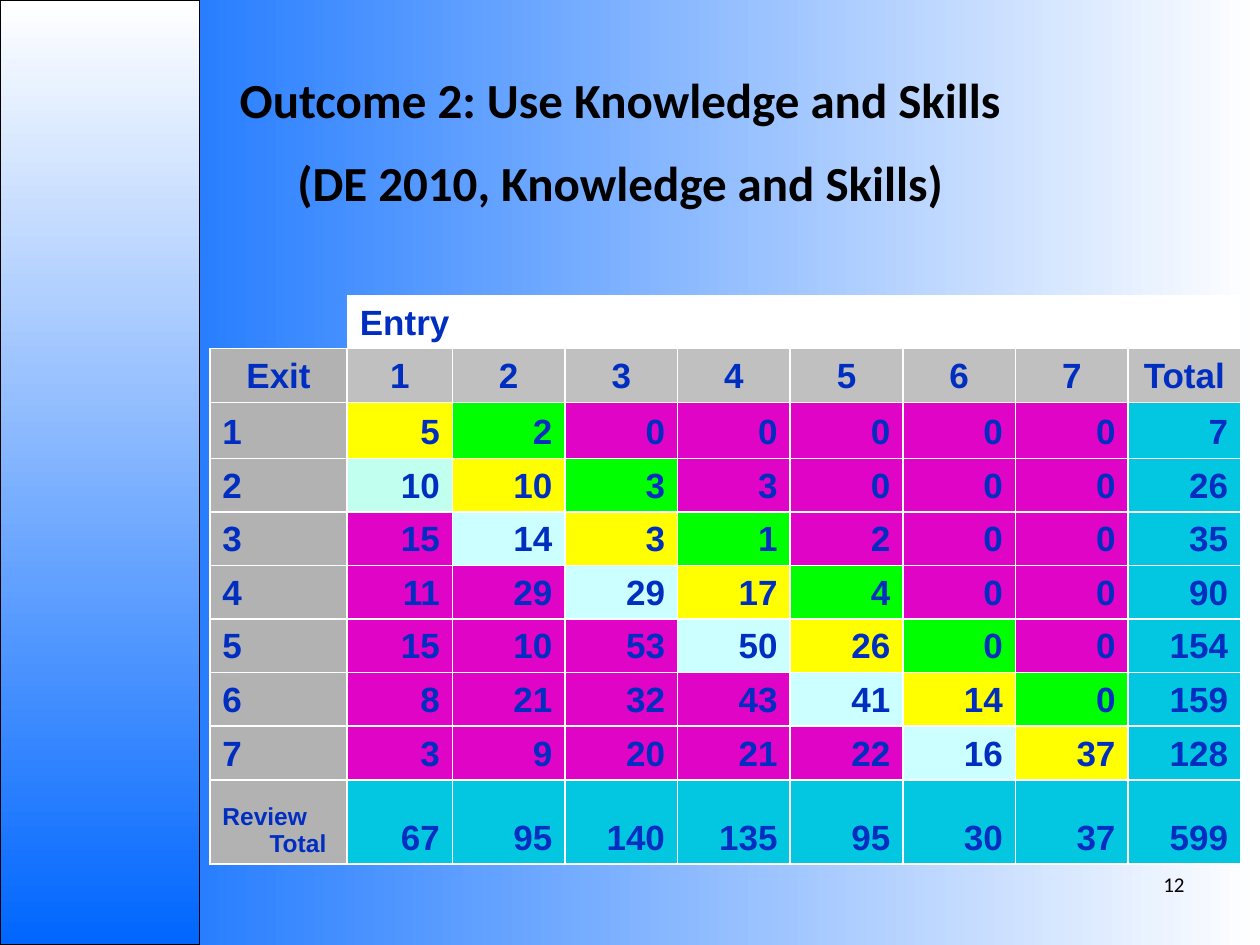
from lxml.etree import SubElement
from pptx import Presentation
from pptx.dml.color import RGBColor
from pptx.enum.shapes import MSO_SHAPE
from pptx.enum.text import MSO_ANCHOR, PP_ALIGN
from pptx.oxml.ns import qn
from pptx.util import Cm, Pt

TITLE = ["Outcome 2: Use Knowledge and Skills", "(DE 2010, Knowledge and Skills)"]
PAGE = "12"
ENTRY = "Entry"
HEAD = ["Exit", "1", "2", "3", "4", "5", "6", "7", "Total"]
BODY = [
    ["1", 5, 2, 0, 0, 0, 0, 0, 7],
    ["2", 10, 10, 3, 3, 0, 0, 0, 26],
    ["3", 15, 14, 3, 1, 2, 0, 0, 35],
    ["4", 11, 29, 29, 17, 4, 0, 0, 90],
    ["5", 15, 10, 53, 50, 26, 0, 0, 154],
    ["6", 8, 21, 32, 43, 41, 14, 0, 159],
    ["7", 3, 9, 20, 21, 22, 16, 37, 128],
]
FOOT = ["Review Total", 67, 95, 140, 135, 95, 30, 37, 599]

THEME = {
    "blue": "0066FF", "white": "FFFFFF", "black": "000000", "ink": "002EC0",
    "side": "B2B2B2", "head": "C0C0C0", "total": "03C7E1", "same": "FFFF00",
    "above": "00FF00", "below": "CCFFFF", "mint": "C1FFEF", "far": "E004C6",
    "title": {"name": "Calibri", "size": Pt(28), "bold": True},
    "page": {"name": "Calibri", "size": Pt(12), "bold": False},
    "cell": {"name": "Arial", "size": Pt(20), "bold": True},
    "small": {"name": "Arial", "size": Pt(14), "bold": True},
}
COLS = [2.77, 2.12] + [2.27] * 7
ROWS = [1.08] * 3 + [1.13] + [1.08] * 6 + [1.7]
LAST = len(ROWS) - 1
INDENT = Cm(0.95)


def tint(name):
    return RGBColor.from_string(THEME[name])


def style(para, kind, color, align):
    para.alignment = align
    for key, value in THEME[kind].items():
        setattr(para.font, key, value)
    para.font.color.rgb = tint(color)


def blend(fill, names, angle):
    """Fill with a two-stop gradient; the angle runs anticlockwise."""
    fill.gradient()
    fill.gradient_angle = angle
    for stop, name in zip(fill.gradient_stops, names):
        stop.color.rgb = tint(name)


def add_text(slide, place, lines, kind, align, anchor):
    frame = slide.shapes.add_textbox(*map(Cm, place)).text_frame
    frame.word_wrap = True
    frame.vertical_anchor = anchor
    for i, line in enumerate(lines):
        para = frame.add_paragraph() if i else frame.paragraphs[0]
        para.text = line
        if i:
            para.space_before = Pt(14)
        style(para, kind, "black", align)


def shade(row, col):
    """Name the fill of a cell by its distance from the diagonal."""
    if row == 0 or (row == 1 and col == 0):
        return None
    if row == 1:
        return "white"
    if col == 0:
        return "side"
    if row == 2:
        return "head"
    if row == LAST or col == len(COLS) - 1:
        return "total"
    level = row - 2
    if (level, col) == (2, 1):
        return "mint"
    return {0: "same", -1: "above", 1: "below"}.get(level - col, "far")


def edge(cell, row):
    """Rule all sides from the header down, and only the bottom above it."""
    props = cell._tc.get_or_add_tcPr()
    shown = {0: "", 1: "B"}.get(row, "LRTB")
    for side in "LRTB":
        line = SubElement(props, qn(f"a:ln{side}"), w=str(Pt(1)))
        if side in shown:
            solid = SubElement(line, qn("a:solidFill"))
            SubElement(solid, qn("a:srgbClr"), val=THEME["white"])
        else:
            SubElement(line, qn("a:noFill"))


def fill_cell(cell, row, col, value):
    edge(cell, row)
    name = shade(row, col)
    if name:
        cell.fill.solid()
        cell.fill.fore_color.rgb = tint(name)
    else:
        cell.fill.background()
    cell.vertical_anchor = MSO_ANCHOR.BOTTOM
    if value == "":
        return
    para = cell.text_frame.paragraphs[0]
    para.text = str(value)
    props = para._p.get_or_add_pPr()
    props.set("marL", str(INDENT))
    props.set("indent", str(-INDENT))
    if row == 2:
        align = PP_ALIGN.CENTER
    else:
        align = PP_ALIGN.RIGHT if row > 2 and col else PP_ALIGN.LEFT
    style(para, "small" if (row, col) == (LAST, 0) else "cell", "ink", align)


def add_grid(slide):
    blank = [""] * len(COLS)
    data = [blank, ["", ENTRY] + blank[2:], HEAD, *BODY, FOOT]
    place = (4.23, 4.87, sum(COLS), sum(ROWS))
    table = slide.shapes.add_table(len(ROWS), len(COLS), *map(Cm, place)).table
    table.first_row = table.horz_banding = False
    for col, width in zip(table.columns, COLS):
        col.width = Cm(width)
    for row, height in zip(table.rows, ROWS):
        row.height = Cm(height)
    for i, line in enumerate(data):
        for j, value in enumerate(line):
            fill_cell(table.cell(i, j), i, j, value)
    table.cell(0, 0).merge(table.cell(0, 1))
    table.cell(1, 1).merge(table.cell(1, 2))


def main():
    deck = Presentation()
    deck.slide_width, deck.slide_height = Cm(25.4), Cm(19.05)
    slide = deck.slides.add_slide(deck.slide_layouts[6])
    blend(slide.background.fill, ("blue", "white"), 0)

    panel = slide.shapes.add_shape(MSO_SHAPE.RECTANGLE, 0, 0, Cm(4.02), Cm(19.05))
    panel.shadow.inherit = False
    blend(panel.fill, ("white", "blue"), 270)
    panel.line.color.rgb = tint("black")
    panel.line.width = Pt(0.75)

    add_grid(slide)
    add_text(slide, (1.07, 1.27, 22.86, 3.25), TITLE, "title",
             PP_ALIGN.CENTER, MSO_ANCHOR.TOP)
    add_text(slide, (20.32, 16.93, 3.81, 1.27), [PAGE], "page",
             PP_ALIGN.RIGHT, MSO_ANCHOR.BOTTOM)
    deck.save("out.pptx")


if __name__ == "__main__":
    main()
